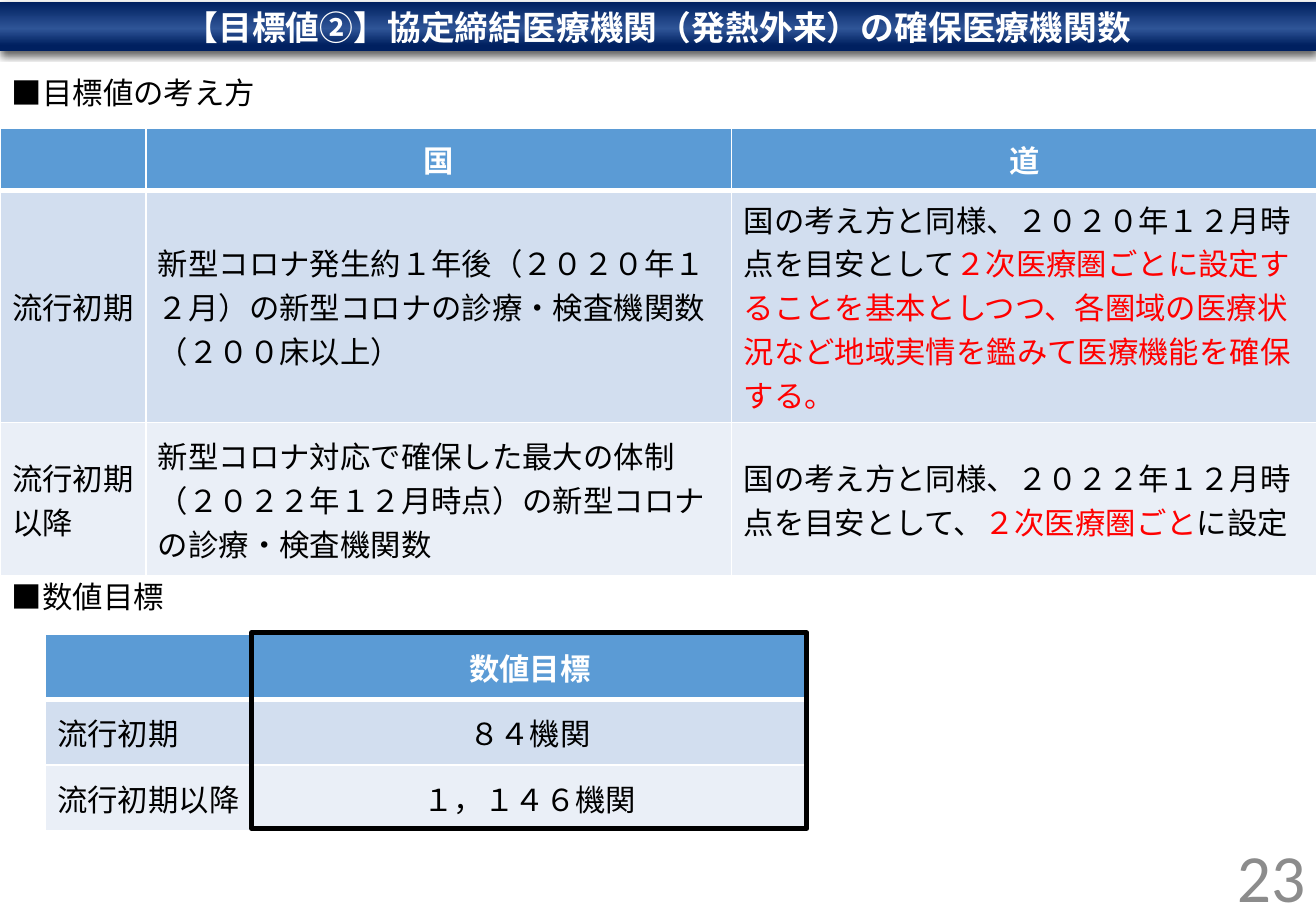
from dataclasses import dataclass

from pptx import Presentation
from pptx.dml.color import RGBColor
from pptx.enum.shapes import MSO_SHAPE
from pptx.enum.text import MSO_ANCHOR as Anchor, MSO_AUTO_SIZE as AutoSize, PP_ALIGN as Align
from pptx.oxml import parse_xml
from pptx.oxml.ns import nsdecls
from pptx.util import Inches, Pt

JP_FONT = "Noto Sans CJK JP"
BLACK, WHITE, RED = "000000", "FFFFFF", "FF0000"
HEADER_FILL, ROW_FILLS = "5B9BD5", ("D2DEEF", "EAEFF7")


@dataclass
class Run:
    text: str
    color: str = BLACK
    size: float = 18
    bold: bool = False
    font: str = JP_FONT


@dataclass
class Cell:
    runs: list[Run]
    align: Align = Align.LEFT
    space_before: float = 0


@dataclass
class Label:
    box: tuple[float, float, float, float]
    run: Run
    align: Align = Align.LEFT


@dataclass
class Grid:
    left: float
    top: float
    cols: list[float]
    rows: list[float]
    cells: list[list[Cell]]


def rgb(color: str) -> RGBColor:
    return RGBColor.from_string(color)


def add_run(p, run: Run) -> None:
    r = p.add_run()
    r.text = run.text
    r.font.size = Pt(run.size)
    r.font.bold = run.bold
    r.font.color.rgb = rgb(run.color)
    r.font.name = run.font
    r.font._element.append(parse_xml(f'<a:ea {nsdecls("a")} typeface="{run.font}"/>'))


def fill_text(tf, runs: list[Run], align: Align) -> None:
    tf.word_wrap = True
    tf.vertical_anchor = Anchor.MIDDLE
    p = tf.paragraphs[0]
    p.alignment = align
    for run in runs:
        add_run(p, run)


def add_title(slide, text: str) -> None:
    sp = slide.shapes.title
    sp.left, sp.top, sp.width, sp.height = map(Inches, (0, 0.02, 10.83, 0.4))
    stops = "".join(
        f'<a:gs pos="{pos * 1000}"><a:srgbClr val="{color}"/></a:gs>'
        for pos, color in ((0, "002060"), (54, "2F5597"), (88, "002060"))
    )
    sp_pr = sp._element.spPr
    sp_pr.append(parse_xml(
        f'<a:gradFill {nsdecls("a")} rotWithShape="1"><a:gsLst>{stops}</a:gsLst>'
        '<a:lin ang="5400000" scaled="0"/></a:gradFill>'))
    sp_pr.append(parse_xml(
        f'<a:effectLst {nsdecls("a")}><a:outerShdw blurRad="{Pt(4.5)}" dist="{Pt(1.5)}" '
        f'dir="5400000" rotWithShape="0"><a:srgbClr val="{BLACK}"><a:alpha val="63000"/>'
        '</a:srgbClr></a:outerShdw></a:effectLst>'))
    fill_text(sp.text_frame, [Run(text, WHITE, 20, True)], Align.CENTER)
    sp.text_frame.auto_size = AutoSize.NONE


def add_label(slide, label: Label) -> None:
    sp = slide.shapes.add_textbox(*map(Inches, label.box))
    fill_text(sp.text_frame, [label.run], label.align)


def set_borders(cell, top: float, bottom: float) -> None:
    tc_pr = cell._tc.get_or_add_tcPr()
    for i, (side, width) in enumerate(zip("LRTB", (1, 1, top, bottom))):
        tc_pr.insert(i, parse_xml(
            f'<a:ln{side} {nsdecls("a")} w="{Pt(width)}"><a:solidFill>'
            f'<a:srgbClr val="{WHITE}"/></a:solidFill></a:ln{side}>'))


def add_grid(slide, grid: Grid) -> None:
    size = map(Inches, (grid.left, grid.top, sum(grid.cols), sum(grid.rows)))
    table = slide.shapes.add_table(len(grid.rows), len(grid.cols), *size).table
    for col, width in zip(table.columns, grid.cols):
        col.width = Inches(width)
    for i, (row, height) in enumerate(zip(table.rows, grid.rows)):
        row.height = Inches(height)
        for cell, content in zip(row.cells, grid.cells[i]):
            cell.fill.solid()
            cell.fill.fore_color.rgb = rgb(ROW_FILLS[(i - 1) % 2] if i else HEADER_FILL)
            set_borders(cell, 3 if i == 1 else 1, 1 if i else 3)
            cell.vertical_anchor = Anchor.MIDDLE
            p = cell.text_frame.paragraphs[0]
            p.alignment = content.align
            p.space_before = Pt(content.space_before)
            for run in content.runs:
                add_run(p, run)


def add_frame(slide, box: tuple[float, float, float, float]) -> None:
    sp = slide.shapes.add_shape(MSO_SHAPE.RECTANGLE, *map(Inches, box))
    sp.shadow.inherit = False
    sp.fill.background()
    sp.line.color.rgb = rgb(BLACK)
    sp.line.width = Pt(3)


def header(text: str) -> Cell:
    return Cell([Run(text, WHITE, bold=True)], Align.CENTER)


def body(text: str, align: Align = Align.LEFT) -> Cell:
    return Cell([Run(text)], align)


POLICY = Grid(0, 1.06, [1.2, 4.82, 4.82], [0.51, 1.9, 1.26], [
    [Cell([]), header("国"), header("道")],
    [body("流行初期"),
     body("新型コロナ発生約１年後（２０２０年１２月）の新型コロナの診療・検査機関数 （２００床以上）"),
     Cell([Run("国の考え方と同様、２０２０年１２月時点を目安として"),
           Run("２次医療圏ごとに設定することを基本としつつ、各圏域の医療状況など地域実情を鑑みて"
               "医療機能を確保する。", RED)], space_before=3)],
    [body("流行初期以降"),
     body("新型コロナ対応で確保した最大の体制（２０２２年１２月時点）の新型コロナの診療・検査機関数"),
     Cell([Run("国の考え方と同様、２０２２年１２月時点を目安として、"),
           Run("２次医療圏ごと", RED), Run("に設定")])],
])
TARGETS = Grid(0.37, 5.22, [1.71, 4.56], [0.54] * 3, [
    [Cell([]), header("数値目標")],
    [body("流行初期"), body("８４機関", Align.CENTER)],
    [body("流行初期以降"), body("１，１４６機関", Align.CENTER)],
])
LABELS = [
    Label((0, 0.61, 3.21, 0.3), Run("■目標値の考え方")),
    Label((0, 4.76, 2.34, 0.3), Run("■数値目標")),
    Label((8.4, 6.82, 2.44, 0.77), Run("23", "8C8C8C", 40, font="Calibri"), Align.RIGHT),
]


def main() -> None:
    prs = Presentation()
    prs.slide_width, prs.slide_height = Inches(10.83), Inches(7.5)
    slide = prs.slides.add_slide(prs.slide_layouts[5])
    add_title(slide, "【目標値②】協定締結医療機関（発熱外来）の確保医療機関数")
    for grid in (POLICY, TARGETS):
        add_grid(slide, grid)
    add_frame(slide, (2.07, 5.21, 4.57, 1.61))
    for label in LABELS:
        add_label(slide, label)
    prs.save("out.pptx")


if __name__ == "__main__":
    main()
